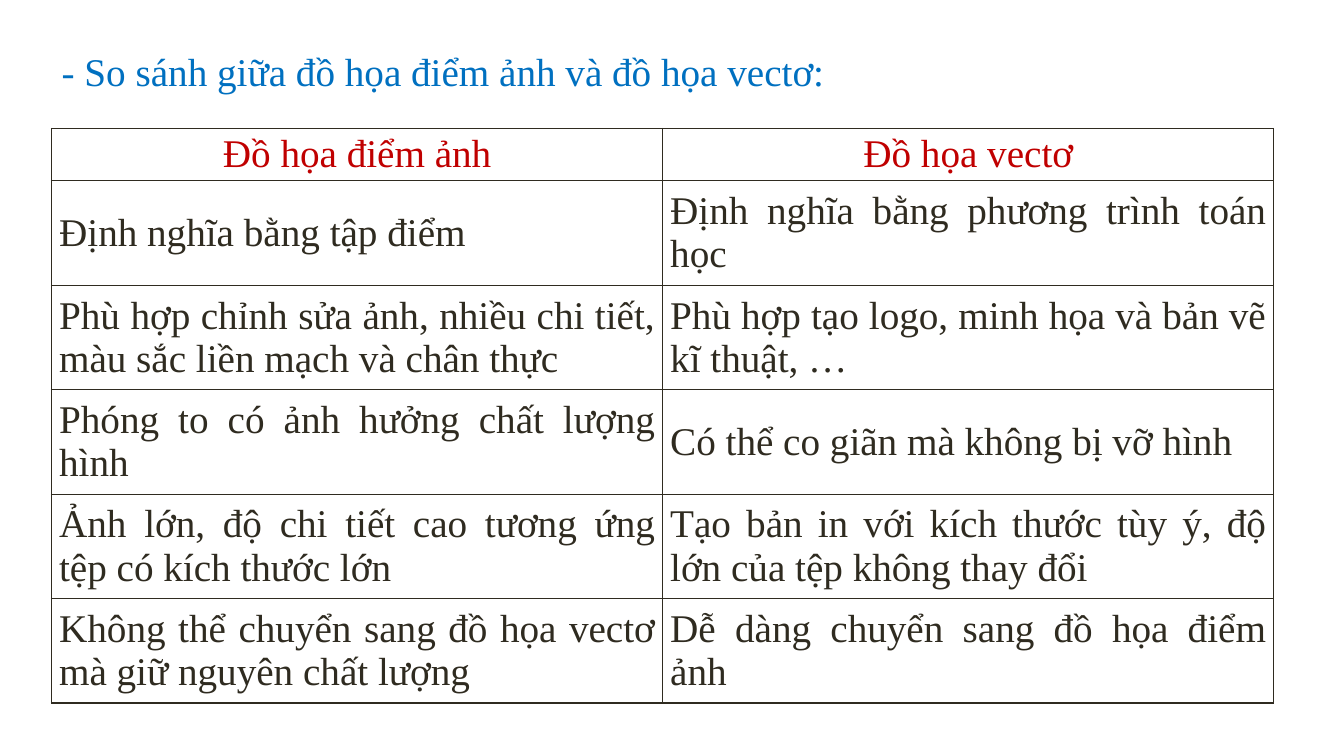
import pptx
import pptx.dml.color
import pptx.enum.text
import pptx.oxml
import pptx.oxml.ns
import pptx.util

Cm = pptx.util.Cm
Pt = pptx.util.Pt
RGBColor = pptx.dml.color.RGBColor
ALIGN = pptx.enum.text.PP_ALIGN
ANCHOR = pptx.enum.text.MSO_ANCHOR

BLUE = RGBColor(0x00, 0x70, 0xC0)
RED = RGBColor(0xC0, 0x00, 0x00)
DARK = RGBColor(0x2F, 0x2B, 0x20)
FONT = "Times New Roman"
SIZE = Pt(28)

TITLE = "- So sánh giữa đồ họa điểm ảnh và đồ họa vectơ:"
ROWS = [
    ("Đồ họa điểm ảnh", "Đồ họa vectơ"),
    ("Định nghĩa bằng tập điểm", "Định nghĩa bằng phương trình toán học"),
    ("Phù hợp chỉnh sửa ảnh, nhiều chi tiết, màu sắc liền mạch và chân thực",
     "Phù hợp tạo logo, minh họa và bản vẽ kĩ thuật, …"),
    ("Phóng to có ảnh hưởng chất lượng hình",
     "Có thể co giãn mà không bị vỡ hình"),
    ("Ảnh lớn, độ chi tiết cao tương ứng tệp có kích thước lớn",
     "Tạo bản in với kích thước tùy ý, độ lớn của tệp không thay đổi"),
    ("Không thể chuyển sang đồ họa vectơ mà giữ nguyên chất lượng",
     "Dễ dàng chuyển sang đồ họa điểm ảnh"),
]


def write(frame, text, color, align):
    """Put one styled paragraph into a text frame."""
    frame.text = text
    para = frame.paragraphs[0]
    para.alignment = align
    font = para.runs[0].font
    font.name, font.size = FONT, SIZE
    font.color.rgb = color
    return para


def rule(cell):
    """Draw thin lines on all four sides of a cell."""
    props = cell._tc.get_or_add_tcPr()
    space = pptx.oxml.ns.nsdecls("a")
    for spot, side in enumerate(("lnL", "lnR", "lnT", "lnB")):
        line = pptx.oxml.parse_xml(
            f'<a:{side} {space} w="{Pt(1)}"><a:solidFill>'
            f'<a:srgbClr val="{DARK}"/></a:solidFill></a:{side}>')
        props.insert(spot, line)


def add_title(slide, left, top, width, height):
    title = slide.shapes.title
    title.left, title.top = left, top
    title.width, title.height = width, height
    frame = title.text_frame
    para = write(frame, TITLE, BLUE, ALIGN.JUSTIFY)
    para.line_spacing = 1.15
    frame.word_wrap = True
    frame.auto_size = pptx.enum.text.MSO_AUTO_SIZE.NONE
    frame.vertical_anchor = ANCHOR.TOP


def add_grid(slide, left, top, width, height):
    count = len(ROWS[0])
    table = slide.shapes.add_table(
        len(ROWS), count, left, top, width, height).table
    table.first_row = table.horz_banding = False

    # Equal columns; the head row is half as tall as the others
    for col in table.columns:
        col.width = width // count
    unit = height // (2 * len(ROWS) - 1)
    for index, row in enumerate(table.rows):
        row.height = 2 * unit if index else unit

    # Cells
    for index, texts in enumerate(ROWS):
        color, align = (DARK, ALIGN.JUSTIFY) if index else (RED, ALIGN.CENTER)
        for col, text in enumerate(texts):
            cell = table.cell(index, col)
            write(cell.text_frame, text, color, align)
            cell.vertical_anchor = ANCHOR.MIDDLE
            cell.margin_left = cell.margin_right = Cm(0.19)
            cell.margin_top = cell.margin_bottom = 0
            cell.fill.background()
            rule(cell)


def main():
    deck = pptx.Presentation()
    deck.slide_width, deck.slide_height = Cm(33.87), Cm(19.05)
    slide = deck.slides.add_slide(deck.slide_layouts[5])
    add_title(slide, Cm(1.3), Cm(0.9), Cm(30.6), Cm(1.53))
    add_grid(slide, Cm(1.3), Cm(3.24), Cm(30.8), Cm(14.48))
    deck.save("out.pptx")


if __name__ == "__main__":
    main()
